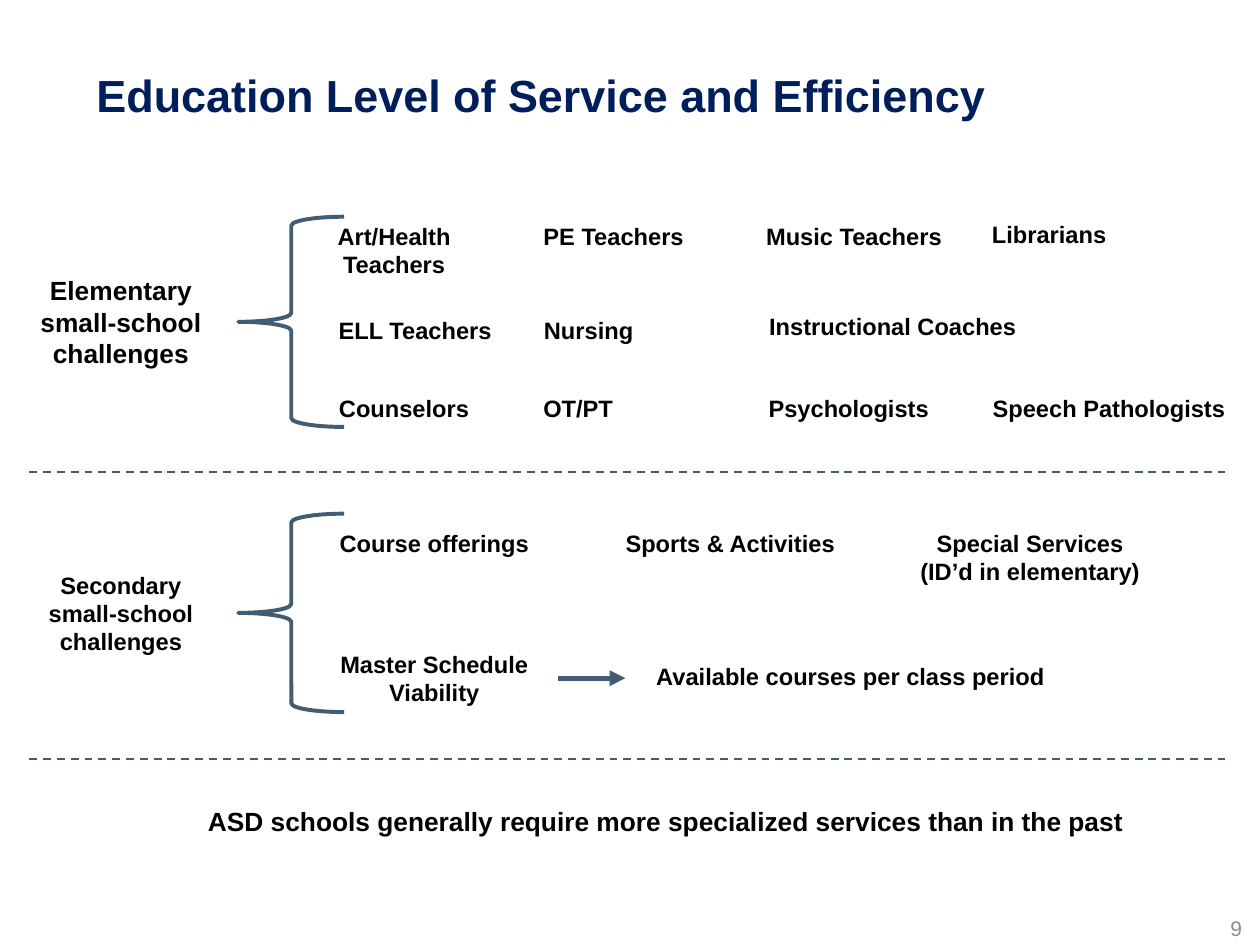
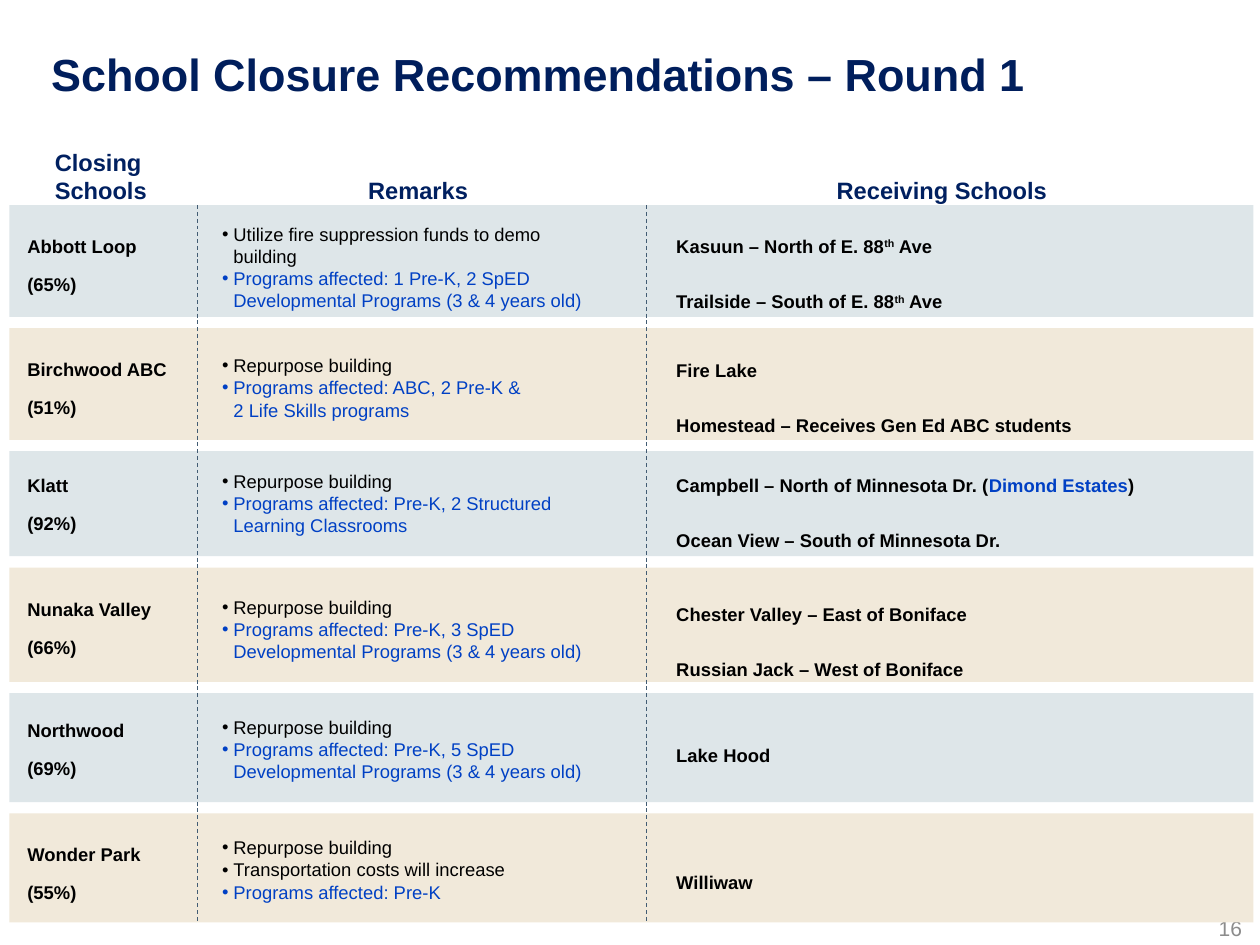
from dataclasses import dataclass
from itertools import cycle

from lxml import etree
from pptx import Presentation
from pptx.dml.color import RGBColor
from pptx.enum.dml import MSO_LINE
from pptx.enum.shapes import MSO_CONNECTOR, MSO_SHAPE
from pptx.enum.text import MSO_ANCHOR, MSO_AUTO_SIZE, PP_ALIGN
from pptx.oxml.ns import qn
from pptx.util import Pt

LEFT, CENTER, RIGHT = PP_ALIGN.LEFT, PP_ALIGN.CENTER, PP_ALIGN.RIGHT
TOP, MIDDLE = MSO_ANCHOR.TOP, MSO_ANCHOR.MIDDLE
NO_FIT = MSO_AUTO_SIZE.NONE
DASH = MSO_LINE.DASH
STRAIGHT = MSO_CONNECTOR.STRAIGHT
BRACE, RECTANGLE = MSO_SHAPE.LEFT_BRACE, MSO_SHAPE.RECTANGLE
TITLE_ONLY = 5


@dataclass(frozen=True)
class Theme:
    font: str = "Arial"
    title: str = "001E5C"
    header: str = "002060"
    ink: str = "000000"
    accent: str = "0040C4"
    rule: str = "425C73"
    muted: str = "8C8C8C"
    bands: tuple = ("DEE6E9", "F1E9DA")
    title_size: float = 34.2
    large: float = 20
    label: float = 18
    number: float = 16
    body: float = 14


THEME = Theme()


@dataclass(frozen=True)
class Box:
    left: float
    top: float
    width: float
    height: float

    def inner(self, x, y, width, height):
        return Box(self.left + x, self.top + y, width, height)

    def points(self):
        return Pt(self.left), Pt(self.top), Pt(self.width), Pt(self.height)


@dataclass(frozen=True)
class School:
    name: str
    rate: str
    height: float
    remarks: tuple
    receiving: tuple
    offsets: tuple
    spacing: float = 2.5


PAGE = Box(0, 0, 959, 719.3)
ELEMENTARY = Box(22, 165, 914, 160)
SECONDARY = Box(22, 391, 914, 151)
CLOSURES = Box(7.2, 156.2, 946.8, 545.2)
BAND_GAP = 8.6

COLUMNS = (228, 384, 555, 725.5)
ROWS = (0, 72, 131)
ELEMENTARY_GRID = (
    (("Art/Health Teachers", 130, -15, 0), ("PE Teachers", 122, 0, 0),
     ("Music Teachers", 150, -2, 0), ("Librarians", 102, 0, -1.5)),
    (("ELL Teachers", 132, 0, 0), ("Nursing", 84, 0, 0),
     ("Instructional Coaches", 205, 0, -3.5)),
    (("Counselors", 115, 0, 0), ("OT/PT", 68, 0, 0),
     ("Psychologists", 138, 0, 0), ("Speech Pathologists", 193, 0, 0)),
)
SECONDARY_LABELS = (
    ("Course offerings", 229, 8, 159),
    ("Sports & Activities", 446, 8, 175.5),
    ("Special Services\n(ID’d in elementary)", 668, 8, 188),
    ("Master Schedule\nViability", 229, 100, 159),
    ("Available courses per class period", 469, 109, 312.5),
)

REPURPOSE = "Repurpose building"
DEVELOPMENTAL = "SpED Developmental Programs (3 & 4 years old)"
SCHOOLS = (
    School("Abbott Loop", "(65%)", 85,
           ("Utilize fire suppression funds to demo building",
            f"Programs affected: 1 Pre-K, 2 {DEVELOPMENTAL}"),
           ((("Kasuun – North of E. 88", ""), ("th", "super"), (" Ave", "")),
            (("Trailside – South of E. 88", ""), ("th", "super"), (" Ave", ""))),
           (19, 10, -6)),
    School("Birchwood ABC", "(51%)", 85,
           (REPURPOSE, "Programs affected: ABC, 2 Pre-K &\v2 Life Skills programs"),
           ("Fire Lake", "Homestead – Receives Gen Ed ABC students"),
           (19, 16.5, -5.5)),
    School("Klatt", "(92%)", 80,
           (REPURPOSE, "Programs affected: Pre-K, 2 Structured Learning Classrooms"),
           ((("Campbell – North of Minnesota Dr. (", ""),
             ("Dimond Estates", "accent"), (")", "")),
            "Ocean View – South of Minnesota Dr."),
           (14, 11, -11.5)),
    School("Nunaka Valley", "(66%)", 87,
           (REPURPOSE, f"Programs affected: Pre-K, 3 {DEVELOPMENTAL}"),
           ("Chester Valley – East of Boniface", "Russian Jack – West of Boniface"),
           (20, 18, -2)),
    School("Northwood", "(69%)", 83,
           (REPURPOSE, f"Programs affected: Pre-K, 5 {DEVELOPMENTAL}"),
           ("Lake Hood",), (16.5, 14, 27), 1.5),
    School("Wonder Park", "(55%)", 83,
           (REPURPOSE, "Transportation costs will increase",
            "Programs affected: Pre-K"),
           ("Williwaw",), (19, 14, 15)),
)


def color(value):
    return RGBColor.from_string(value)


def set_font(font, size, ink=THEME.ink, bold=True):
    font.name = THEME.font
    font.size = Pt(size)
    font.bold = bold
    font.color.rgb = color(ink)


def add_bullet(para):
    properties = para._p.get_or_add_pPr()
    properties.set("marL", str(Pt(8.6)))
    properties.set("indent", str(-Pt(8.6)))
    etree.SubElement(properties, qn("a:buFont")).set("typeface", THEME.font)
    etree.SubElement(properties, qn("a:buChar")).set("char", "•")


def add_spans(para, spans):
    for text, style in spans:
        span = para.add_run()
        span.text = text
        if style == "super":
            span._r.get_or_add_rPr().set("baseline", "30000")
        elif style == "accent":
            span.font.color.rgb = color(THEME.accent)


def add_text(page, box, paragraphs, size, ink=THEME.ink, bold=True, align=LEFT,
             anchor=TOP, wrap=True, spacing=None, after=None, bullets=False):
    frame = page.shapes.add_textbox(*box.points()).text_frame
    frame.word_wrap = wrap
    frame.auto_size = NO_FIT
    frame.vertical_anchor = anchor
    for index, content in enumerate(paragraphs):
        para = frame.add_paragraph() if index else frame.paragraphs[0]
        if isinstance(content, str):
            para.text = content
        else:
            add_spans(para, content)
        if bullets:
            add_bullet(para)
        para.alignment = align
        if spacing:
            para.line_spacing = spacing
        if after:
            para.space_after = Pt(after)
        accented = bullets and content.startswith("Programs affected")
        set_font(para.font, size, THEME.accent if accented else ink, bold)
    return frame


def add_rule(page, start, end, width, dashed=True, arrow=False):
    connector = page.shapes.add_connector(STRAIGHT, *map(Pt, start + end))
    connector.line.color.rgb = color(THEME.rule)
    connector.line.width = Pt(width)
    if dashed:
        connector.line.dash_style = DASH
    if arrow:
        line = connector.line._get_or_add_ln()
        etree.SubElement(line, qn("a:tailEnd")).set("type", "triangle")
    etree.SubElement(connector._element.spPr, qn("a:effectLst"))


def add_page(deck, title, title_box, number):
    page = deck.slides.add_slide(deck.slide_layouts[TITLE_ONLY])
    holder = page.shapes.title
    holder.left, holder.top, holder.width, holder.height = title_box.points()
    frame = holder.text_frame
    frame.text = title
    frame.word_wrap = True
    frame.auto_size = NO_FIT
    frame.vertical_anchor = MIDDLE
    para = frame.paragraphs[0]
    para.alignment = LEFT
    set_font(para.font, THEME.title_size, THEME.title)
    footer = add_text(page, PAGE.inner(738.7, 687.6, 216, 38), (number,),
                      THEME.number, THEME.muted, False, RIGHT, MIDDLE)
    footer.margin_left = footer.margin_right = Pt(9.4)
    return page


def draw_challenges(page, box, heading, heading_size, labels):
    add_text(page, box.inner(0, 0, 140, box.height), heading, heading_size,
             align=CENTER, anchor=MIDDLE, wrap=False)
    brace = page.shapes.add_shape(
        BRACE, *box.inner(159.4, 0, 80.6, box.height).points())
    brace.shadow.inherit = False
    brace.fill.background()
    brace.line.color.rgb = color(THEME.rule)
    brace.line.width = Pt(3)
    for text, x, y, width in labels:
        lines = text.split("\n")
        add_text(page, box.inner(x, y, width, 7.2 + 21.8 * len(lines)), lines,
                 THEME.label, align=CENTER, wrap=text == "Art/Health Teachers")


def draw_school(page, box, school, fill):
    band = page.shapes.add_shape(RECTANGLE, *box.points())
    band.shadow.inherit = False
    band.fill.solid()
    band.fill.fore_color.rgb = color(fill)
    band.line.fill.background()
    name_top, remarks_top, receiving_top = school.offsets
    add_text(page, box.inner(6.5, name_top, 128, 53), (school.name, school.rate),
             THEME.body, after=12)
    add_text(page, box.inner(154.8, remarks_top, 305, 58), school.remarks,
             THEME.body, bold=False, bullets=True)
    add_text(page, box.inner(500.4, receiving_top, 430, 42.5 * len(school.receiving)),
             school.receiving, THEME.body, spacing=school.spacing)


def draw_closures(page, box):
    top = 0
    for school, fill in zip(SCHOOLS, cycle(THEME.bands)):
        draw_school(page, box.inner(0, top, box.width, school.height), school, fill)
        top += school.height + BAND_GAP
    for x in (143.3, 484.6):
        add_rule(page, (box.left + x, box.top),
                 (box.left + x, box.top + box.height), 0.75)
    headers = (("Closing Schools", 27.4, -47.5, 90, 51, LEFT),
               ("Remarks", 257, -26, 108, 29, CENTER),
               ("Receiving Schools", 581.8, -26, 255.6, 29, CENTER))
    for text, x, y, width, height, align in headers:
        add_text(page, box.inner(x, y, width, height), (text,), THEME.label,
                 THEME.header, align=align)


def build_service_page(deck):
    page = add_page(deck, "Education Level of Service and Efficiency",
                    Box(66.2, 38.2, 868.3, 67.7), "9")
    grid = [(text, x + dx, y + dy, width)
            for y, row in zip(ROWS, ELEMENTARY_GRID)
            for x, (text, width, dx, dy) in zip(COLUMNS, row)]
    challenge = ("small-school", "challenges")
    draw_challenges(page, ELEMENTARY, ("Elementary", *challenge), THEME.large, grid)
    draw_challenges(page, SECONDARY, ("Secondary", *challenge), THEME.label,
                    SECONDARY_LABELS)
    arrow = SECONDARY.inner(403, 125.2, 51, 0)
    add_rule(page, (arrow.left, arrow.top), (arrow.left + arrow.width, arrow.top),
             4, dashed=False, arrow=True)
    for y in (359.3, 577.4):
        add_rule(page, (22.3, y), (936, y), 1.5)
    add_text(page, PAGE.inner(141.8, 609.1, 730, 32),
             ("ASD schools generally require more specialized services than in the past",),
             THEME.large, align=CENTER, wrap=False)


def build_closure_page(deck):
    page = add_page(deck, "School Closure Recommendations – Round 1",
                    Box(31.7, 34.6, 895, 43.2), "16")
    draw_closures(page, CLOSURES)


def main():
    deck = Presentation()
    deck.slide_width, deck.slide_height = Pt(PAGE.width), Pt(PAGE.height)
    build_service_page(deck)
    build_closure_page(deck)
    deck.save("out.pptx")


if __name__ == "__main__":
    main()
